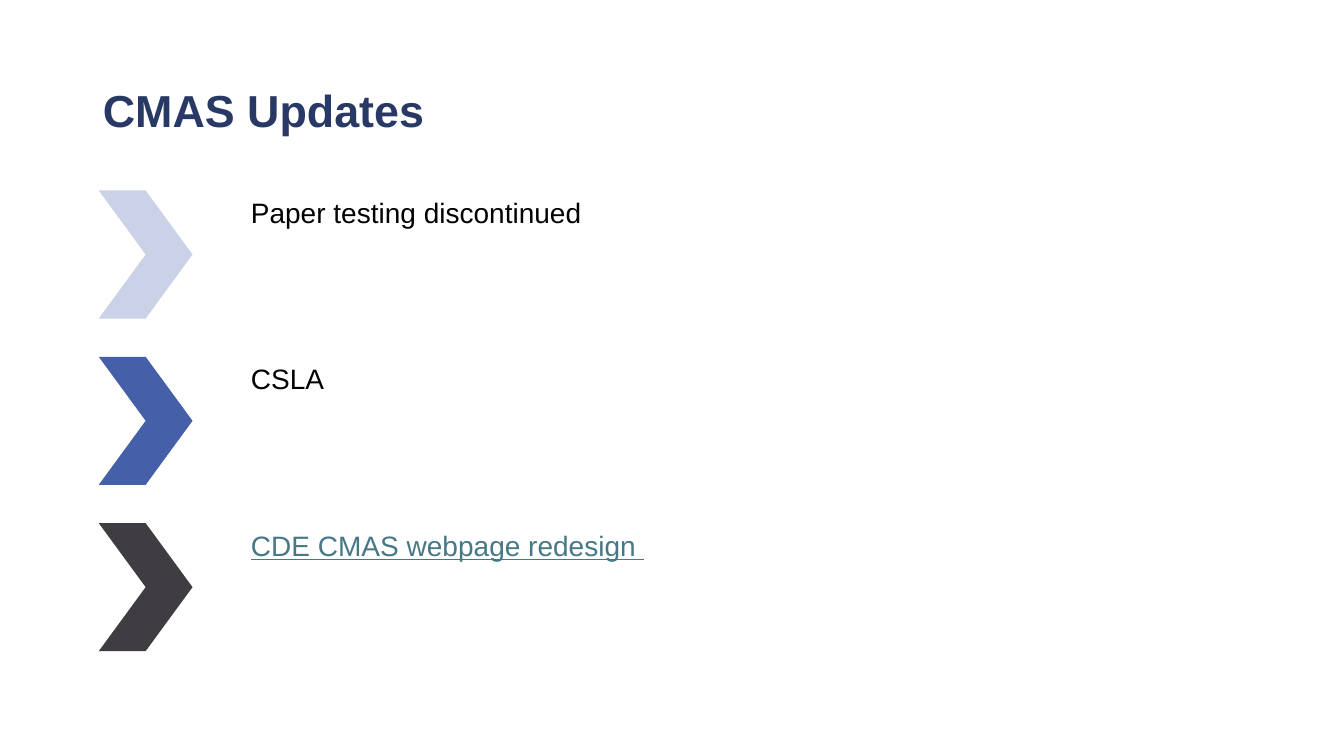
from pptx import Presentation
from pptx import util as u
from pptx.dml.color import RGBColor
from pptx.enum import shapes, text

NAVY = RGBColor(0x29, 0x39, 0x65)
BLACK = RGBColor(0x00, 0x00, 0x00)
TEAL = RGBColor(0x46, 0x78, 0x86)
LAVENDER = RGBColor(0xCB, 0xD1, 0xE7)
BLUE = RGBColor(0x45, 0x5F, 0xA9)
CHARCOAL = RGBColor(0x40, 0x3D, 0x42)

# Grid in inches: one column of chevrons, one of text, three rows
FIRST_ROW, ROW_STEP = 1.89, 1.65
CHEVRON_LEFT, CHEVRON_WIDTH, CHEVRON_HEIGHT = 0.98, 0.93, 1.27
TEXT_LEFT, TEXT_WIDTH, TEXT_HEIGHT = 2.39, 5.67, 1.2
TEXT_DROP = 0.04

# Wording, text colour, underline, chevron colour
UPDATES = [
    ("Paper testing discontinued", BLACK, False, LAVENDER),
    ("CSLA", BLACK, False, BLUE),
    ("CDE CMAS webpage redesign ", TEAL, True, CHARCOAL),
]


def add_span(para, wording, size, color, bold=False, underline=False):
    span = para.add_run()
    span.text = wording
    font = span.font
    font.name, font.size = "Arial", u.Pt(size)
    font.bold, font.underline = bold, underline
    font.color.rgb = color


def set_title(page, wording):
    title = page.shapes.title
    title.left, title.top = u.Inches(0.92), u.Inches(0.4)
    title.width, title.height = u.Inches(11.5), u.Inches(1.45)
    frame = title.text_frame
    frame.auto_size = text.MSO_AUTO_SIZE.NONE
    frame.vertical_anchor = text.MSO_ANCHOR.MIDDLE
    para = frame.paragraphs[0]
    para.alignment = text.PP_ALIGN.LEFT
    para.line_spacing = 0.9
    add_span(para, wording, 32, NAVY, bold=True)


def add_chevron(page, top, color):
    chevron = page.shapes.add_shape(
        shapes.MSO_SHAPE.CHEVRON, u.Inches(CHEVRON_LEFT), u.Inches(top),
        u.Inches(CHEVRON_WIDTH), u.Inches(CHEVRON_HEIGHT))
    chevron.shadow.inherit = False
    chevron.fill.solid()
    chevron.fill.fore_color.rgb = color
    chevron.line.fill.background()


def add_update_text(page, top, wording, color, underline):
    box = page.shapes.add_textbox(
        u.Inches(TEXT_LEFT), u.Inches(top),
        u.Inches(TEXT_WIDTH), u.Inches(TEXT_HEIGHT))
    box.text_frame.word_wrap = True
    para = box.text_frame.paragraphs[0]
    para.line_spacing = 0.9
    para.space_before = u.Pt(10)
    add_span(para, wording, 20, color, underline=underline)


def main():
    deck = Presentation()
    deck.slide_width, deck.slide_height = u.Inches(13.33), u.Inches(7.5)
    page = deck.slides.add_slide(deck.slide_layouts.get_by_name("Title Only"))

    set_title(page, "CMAS Updates")

    # One row per update
    for row, (wording, color, underline, chevron_color) in enumerate(UPDATES):
        top = FIRST_ROW + row * ROW_STEP
        add_update_text(page, top + TEXT_DROP, wording, color, underline)
        add_chevron(page, top, chevron_color)

    deck.save("out.pptx")


if __name__ == "__main__":
    main()
